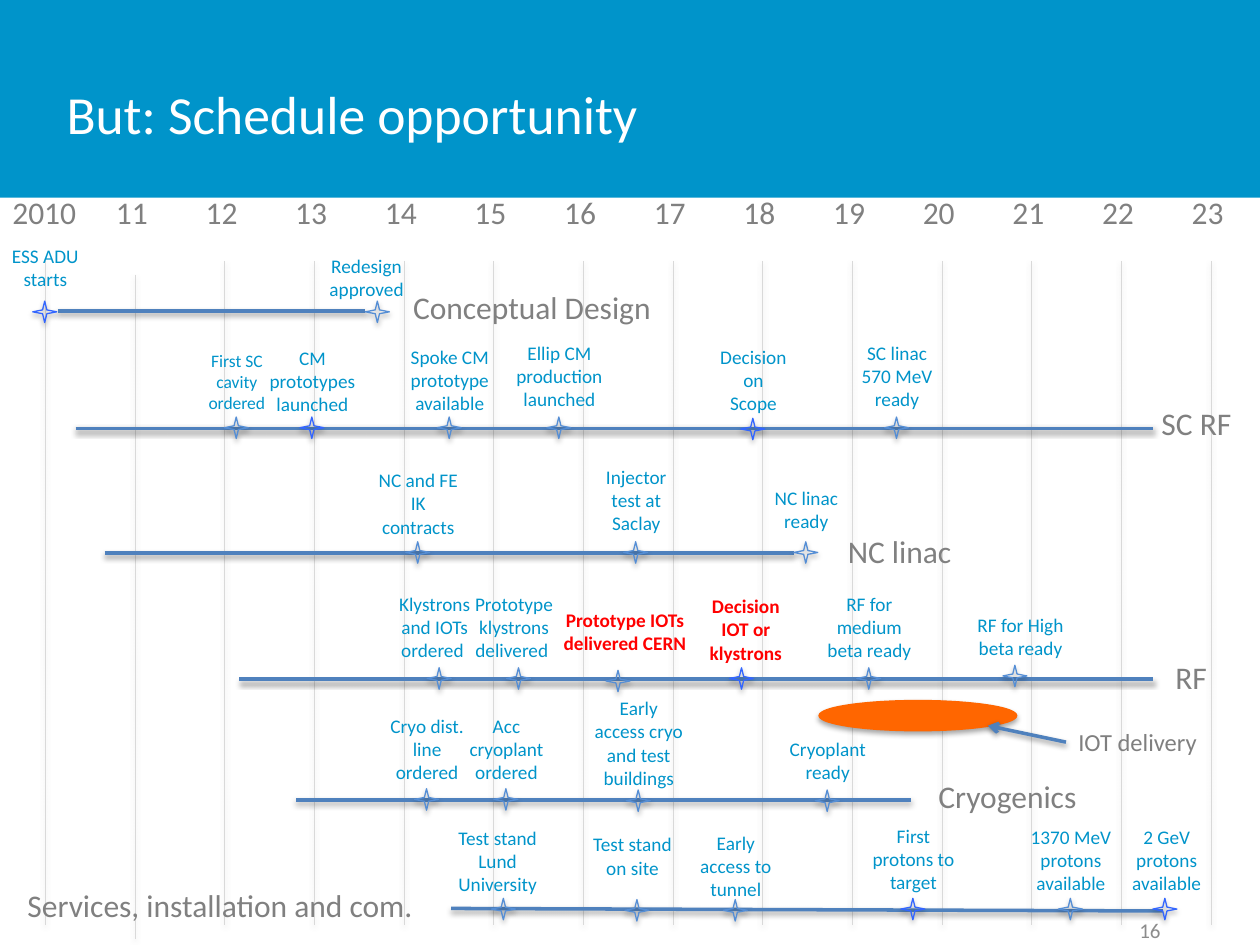
from dataclasses import dataclass

from lxml import etree
from pptx import Presentation
from pptx.dml.color import RGBColor
from pptx.enum import dml, shapes, text
from pptx.oxml import ns
from pptx.util import Inches, Pt

COLOURS = {
    "banner": "0094CA", "title": "FFFFFF", "label": "0094CA", "alert": "FF0000",
    "year": "808080", "delivery": "7F7F7F", "number": "8C8C8C", "grid": "D9D9D9",
    "track": "4F81BD", "star": "558ED5", "key_star": "3366FF", "ellipse": "FF6600",
}
FIRST_YEAR_X, YEAR_STEP = 0.36, 0.7115
STAR_WIDTH, STAR_HEIGHT = 0.19, 0.17


@dataclass
class Milestone:
    """A star on a track, with its label; lines is the number of label lines."""
    star_x: float
    star_y: float
    label_x: float
    label_y: float
    label: str
    lines: int = 3
    key: bool = False
    alert: bool = False
    size: int = 11
    width: float = 0.9


MILESTONES = [
    Milestone(0.26, 2.39, -0.09, 1.89, "ESS ADU starts", lines=2, key=True),
    Milestone(2.9, 2.39, 2.46, 1.97, "Redesign approved", lines=2),
    # SC RF
    Milestone(1.78, 3.31, 1.43, 2.73, "First SC cavity ordered", size=10),
    Milestone(2.38, 3.31, 2.03, 2.7, "CM prototypes launched", key=True),
    Milestone(3.47, 3.31, 3.12, 2.69, "Spoke CM prototype available"),
    Milestone(4.34, 3.31, 3.99, 2.66, "Ellip CM production\vlaunched"),
    Milestone(5.88, 3.32, 5.53, 2.69, "Decision on\nScope", key=True),
    Milestone(7.02, 3.31, 6.67, 2.66, "SC linac 570 MeV ready"),
    # NC linac
    Milestone(3.22, 4.3, 2.87, 3.67, "NC and FE IK contracts"),
    Milestone(4.95, 4.3, 4.6, 3.64, "Injector test at Saclay"),
    Milestone(6.3, 4.3, 5.95, 3.81, "NC linac ready", lines=2),
    # RF
    Milestone(3.39, 5.3, 3, 4.65, "Klystrons and IOTs ordered "),
    Milestone(4.02, 5.3, 3.63, 4.65, "Prototype klystrons delivered "),
    Milestone(4.81, 5.32, 4.37, 4.78, "Prototype IOTs delivered CERN ",
              lines=2, alert=True, width=1.18),
    Milestone(5.79, 5.3, 5.47, 4.67, "Decision IOT or klystrons", key=True, alert=True),
    Milestone(6.8, 5.3, 6.45, 4.65, "RF for medium beta ready"),
    Milestone(7.96, 5.28, 7.65, 4.82, "RF for High beta ready", lines=2),
    # Cryogenics
    Milestone(3.29, 6.26, 2.94, 5.62, "Cryo dist. line ordered"),
    Milestone(3.92, 6.26, 3.57, 5.62, "Acc cryoplant ordered"),
    Milestone(4.97, 6.27, 4.62, 5.48, "Early access cryo and test buildings", lines=4),
    Milestone(6.47, 6.27, 6.12, 5.8, "Cryoplant ready", lines=2),
    # Services, installation and commissioning
    Milestone(3.9, 7.13, 3.5, 6.51, "Test stand Lund University"),
    Milestone(4.96, 7.14, 4.57, 6.56, "Test stand on site", lines=2),
    Milestone(5.74, 7.14, 5.39, 6.55, "Early access to tunnel"),
    Milestone(7.15, 7.13, 6.8, 6.49, "First protons to target", key=True),
    Milestone(8.4, 7.13, 8.05, 6.5, "1370 MeV protons available"),
    Milestone(9.15, 7.13, 8.81, 6.5, "2 GeV protons available", key=True),
]

# line start, line end, name, name left, name top, name width
TRACKS = [
    ((0.46, 2.47), (2.9, 2.47), "Conceptual Design", 3.18, 2.24, 2.47),
    ((0.6, 3.4), (9.15, 3.4), "SC RF", 9.12, 3.16, 0.83),
    ((0.83, 4.39), (6.3, 4.39), "NC linac", 6.63, 4.17, 1.08),
    ((1.9, 5.39), (9.15, 5.39), "RF", 9.23, 5.17, 0.83),
    ((2.35, 6.35), (7.23, 6.35), "Cryogenics", 7.35, 6.12, 1.46),
    ((3.58, 7.21), (9.23, 7.23), "Services, installation and com.", 0.12, 6.98, 3.37),
]


def colour(name):
    return RGBColor.from_string(COLOURS[name])


def add_shadow(shape, opacity, distance):
    """Give a shape a soft shadow straight below it."""
    properties = shape._element.spPr
    effects = etree.SubElement(properties, ns.qn("a:effectLst"))
    shadow = etree.SubElement(effects, ns.qn("a:outerShdw"), blurRad=str(Pt(3.1)),
                              dist=str(Pt(distance)), dir="5400000", rotWithShape="0")
    black = etree.SubElement(shadow, ns.qn("a:srgbClr"), val="000000")
    etree.SubElement(black, ns.qn("a:alpha"), val=str(opacity * 1000))


def add_text(slide, left, top, width, height, content, size, colour_name,
             align=text.PP_ALIGN.LEFT, anchor=text.MSO_ANCHOR.TOP, bold=False):
    box = slide.shapes.add_textbox(Inches(left), Inches(top), Inches(width), Inches(height))
    frame = box.text_frame
    frame.word_wrap = True
    frame.vertical_anchor = anchor
    frame.text = content
    for paragraph in frame.paragraphs:
        paragraph.alignment = align
        paragraph.font.name = "Calibri"
        paragraph.font.size = Pt(size)
        paragraph.font.bold = bold
        paragraph.font.color.rgb = colour(colour_name)


def add_line(slide, start, end, colour_name="track", width=2):
    line = slide.shapes.add_connector(shapes.MSO_CONNECTOR.STRAIGHT,
                                      *(Inches(value) for value in (*start, *end)))
    line.line.color.rgb = colour(colour_name)
    line.line.width = Pt(width)
    return line


def add_outline_shape(slide, kind, left, top, width, height, line_name, fill_name=None):
    shape = slide.shapes.add_shape(kind, Inches(left), Inches(top),
                                   Inches(width), Inches(height))
    if fill_name:
        shape.fill.solid()
        shape.fill.fore_color.rgb = colour(fill_name)
    else:
        shape.fill.background()
    shape.line.color.rgb = colour(line_name)
    shape.line.width = Pt(0.75)
    return shape


def add_banner(slide):
    banner = add_outline_shape(slide, shapes.MSO_SHAPE.RECTANGLE, 0, 0, 10, 1.57,
                               "banner", "banner")
    banner.line.fill.background()
    banner.shadow.inherit = False
    add_text(slide, 0.43, 0.57, 9, 0.66, "But: Schedule opportunity", 30.6, "title",
             anchor=text.MSO_ANCHOR.MIDDLE)


def add_years(slide):
    for index, year in enumerate(["2010", *map(str, range(11, 24))]):
        x = FIRST_YEAR_X + index * YEAR_STEP
        top = 2.18 if index == 1 else 2.07
        line = add_line(slide, (x, top), (x, top + 5.27), "grid", 0.25)
        line.line.dash_style = dml.MSO_LINE.ROUND_DOT
        add_shadow(line, 38, 1.6)
        left, width = (x - 0.25, 0.49) if index else (0, 0.9)
        add_text(slide, left, 1.48, width, 0.4, year, 18, "year")


def add_track(slide, start, end, name, left, top, width):
    add_shadow(add_line(slide, start, end), 38, 1.6)
    add_text(slide, left, top, width, 0.4, name, 18, "year")


def add_milestone(slide, milestone):
    star = add_outline_shape(slide, shapes.MSO_SHAPE.STAR_4_POINT,
                             milestone.star_x, milestone.star_y, STAR_WIDTH, STAR_HEIGHT,
                             "key_star" if milestone.key else "star")
    add_shadow(star, 35, 1.8)
    height = 0.1 + milestone.lines * milestone.size * 0.017
    add_text(slide, milestone.label_x, milestone.label_y, milestone.width, height,
             milestone.label, milestone.size, "alert" if milestone.alert else "label",
             align=text.PP_ALIGN.CENTER, bold=milestone.alert)


def add_delivery(slide):
    ellipse = add_outline_shape(slide, shapes.MSO_SHAPE.OVAL, 6.5, 5.56, 1.57, 0.24,
                                "ellipse", "ellipse")
    add_shadow(ellipse, 35, 1.8)
    add_text(slide, 8.46, 5.72, 1.26, 0.34, "IOT delivery", 14, "delivery")
    arrow = add_line(slide, (8.46, 5.89), (7.84, 5.76))
    etree.SubElement(arrow.line._get_or_add_ln(), ns.qn("a:tailEnd"), type="arrow")
    add_shadow(arrow, 38, 1.6)


def main():
    presentation = Presentation()
    presentation.slide_width, presentation.slide_height = Inches(10), Inches(7.5)
    slide = presentation.slides.add_slide(presentation.slide_layouts[6])
    add_banner(slide)
    add_text(slide, 6.98, 7.18, 2.33, 0.4, "16", 12, "number",
             align=text.PP_ALIGN.RIGHT, anchor=text.MSO_ANCHOR.MIDDLE)
    add_years(slide)
    for track in TRACKS:
        add_track(slide, *track)
    for milestone in MILESTONES:
        add_milestone(slide, milestone)
    add_delivery(slide)
    presentation.save("out.pptx")


if __name__ == "__main__":
    main()
